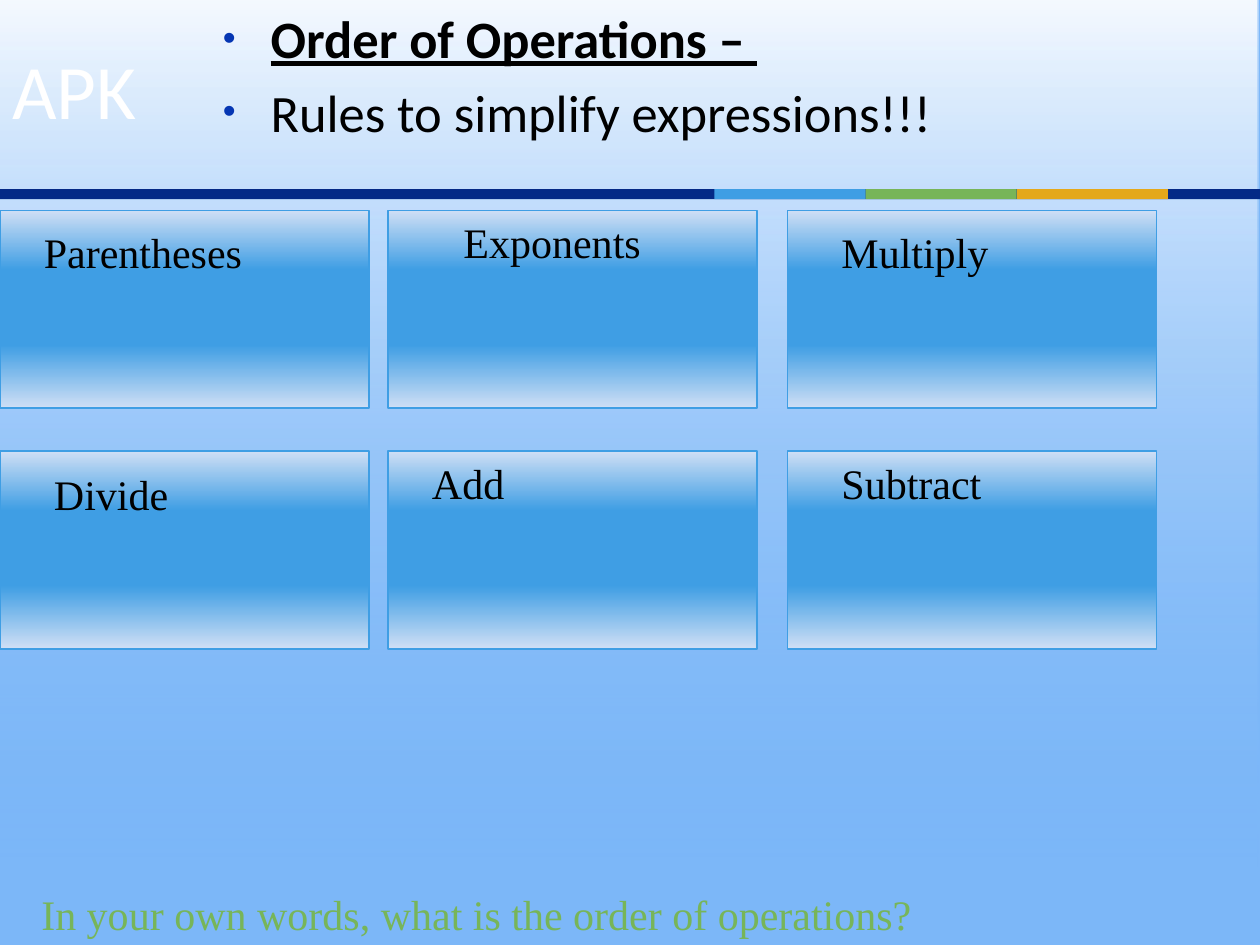
from lxml import etree
from pptx import Presentation
from pptx import util as u
from pptx.dml.color import RGBColor
from pptx.enum import shapes, text
from pptx.oxml import ns

THEME = {
    "sky": "7CB7F8", "white": "FFFFFF", "navy": "042986", "blue": "3F9EE4",
    "green": "77B559", "gold": "E4A81B", "pale": "CFDFF5", "black": "000000",
    "bullet": "0536B3", "sans": "Calibri", "serif": "Times New Roman",
    "title": 44, "body": 30, "label": 24,
}
W, H = 10, 7.5

TITLE = "APK"
RULES = [("Order of Operations – ", True), ("Rules to simplify expressions!!!", False)]
QUESTION = "In your own words, what is the order of operations?"
# Label, then its offset from the top left of its card
CARDS = [
    [("Parentheses", 0.25, 0.08), ("Exponents", 0.5, 0), ("Multiply", 0.33, 0.08)],
    [("Divide", 0.33, 0.09), ("Add", 0.25, 0), ("Subtract", 0.33, 0)],
]
COLS, ROWS = (0, 3.08, 6.25), (1.67, 3.58)
CARD_W, CARD_H = 2.93, 1.57
STRIPES = ("blue", "green", "gold")
STRIPE_X, STRIPE_W, BAR_Y, BAR_H = 5.67, 1.2, 1.5, 0.08
# Position in percent, colour, opacity in percent
CARD_STOPS = [(0, "pale", 100), (30, "blue", 100), (68, "blue", 100), (100, "pale", 100)]
PANEL_STOPS = [(1, "sky", 0), (100, "white", 92)]


def color(name):
    return RGBColor.from_string(THEME[name])


def add_rect(s, x, y, w, h, fill=None):
    sp = s.shapes.add_shape(shapes.MSO_SHAPE.RECTANGLE, *map(u.Inches, (x, y, w, h)))
    sp.shadow.inherit = False
    sp.line.fill.background()
    if fill:
        sp.fill.solid()
        sp.fill.fore_color.rgb = color(fill)
    return sp


def set_gradient(sp, stops, angle):
    """Fill with any number of stops; angle is clockwise degrees."""
    grad = etree.Element(ns.qn("a:gradFill"), rotWithShape="1")
    gs_list = etree.SubElement(grad, ns.qn("a:gsLst"))
    for pos, name, alpha in stops:
        gs = etree.SubElement(gs_list, ns.qn("a:gs"), pos=str(pos * 1000))
        clr = etree.SubElement(gs, ns.qn("a:srgbClr"), val=THEME[name])
        if alpha < 100:
            etree.SubElement(clr, ns.qn("a:alpha"), val=str(alpha * 1000))
    etree.SubElement(grad, ns.qn("a:lin"), ang=str(angle * 60000), scaled="0")
    sp._element.spPr.find(ns.qn("a:prstGeom")).addnext(grad)


def style(p, size, font, name):
    p.font.size = u.Pt(THEME[size])
    p.font.name = THEME[font]
    p.font.color.rgb = color(name)


def add_text(s, x, y, w, h, words, size, font, name, wrap=True):
    tf = s.shapes.add_textbox(*map(u.Inches, (x, y, w, h))).text_frame
    tf.word_wrap = wrap
    p = tf.paragraphs[0]
    p.text = words
    style(p, size, font, name)
    return tf


def add_bullet(p):
    pPr = p._p.get_or_add_pPr()
    pPr.set("marL", str(u.Inches(0.38)))
    pPr.set("indent", str(-u.Inches(0.38)))
    p.space_before = u.Pt(0.2 * THEME["body"])
    clr = etree.Element(ns.qn("a:buClr"))
    etree.SubElement(clr, ns.qn("a:srgbClr"), val=THEME["bullet"])
    marks = [clr,
             etree.Element(ns.qn("a:buSzPct"), val="70000"),
             etree.Element(ns.qn("a:buFont"), typeface="Arial"),
             etree.Element(ns.qn("a:buChar"), char="•")]
    at = pPr.index(pPr.find(ns.qn("a:spcBef"))) + 1
    for i, mark in enumerate(marks):
        pPr.insert(at + i, mark)


def add_backdrop(s):
    s.background.fill.solid()
    s.background.fill.fore_color.rgb = color("sky")
    set_gradient(add_rect(s, -0.01, 0, W, 6.88), PANEL_STOPS, 270)
    add_rect(s, 0, BAR_Y, W, BAR_H, "navy")
    for i, name in enumerate(STRIPES):
        add_rect(s, STRIPE_X + i * STRIPE_W, BAR_Y, STRIPE_W, BAR_H, name)


def add_heading(s):
    tf = add_text(s, 0, 0.08, 1.67, 1.25, TITLE, "title", "sans", "white")
    tf.vertical_anchor = text.MSO_ANCHOR.MIDDLE
    tf = s.shapes.add_textbox(*map(u.Inches, (1.67, 0, 9.01, 1.25))).text_frame
    tf.word_wrap = True
    for i, (words, strong) in enumerate(RULES):
        p = tf.add_paragraph() if i else tf.paragraphs[0]
        p.text = words
        style(p, "body", "sans", "black")
        p.font.bold = p.font.underline = strong
        add_bullet(p)


def add_cards(s):
    for y, row in zip(ROWS, CARDS):
        for x, (label, dx, dy) in zip(COLS, row):
            sp = add_rect(s, x, y, CARD_W, CARD_H)
            set_gradient(sp, CARD_STOPS, 90)
            sp.line.color.rgb = color("blue")
            sp.line.width = u.Pt(1)
            add_text(s, x + dx, y + dy, 2.18, 0.4, label, "label", "serif", "black")


def main():
    prs = Presentation()
    prs.slide_width, prs.slide_height = u.Inches(W), u.Inches(H)
    s = prs.slides.add_slide(prs.slide_layouts[6])
    add_backdrop(s)
    add_heading(s)
    add_cards(s)
    add_text(s, 0.23, H - 0.5, 7.43, 0.5, QUESTION, "label", "serif", "green", wrap=False)
    prs.save("out.pptx")


if __name__ == "__main__":
    main()
